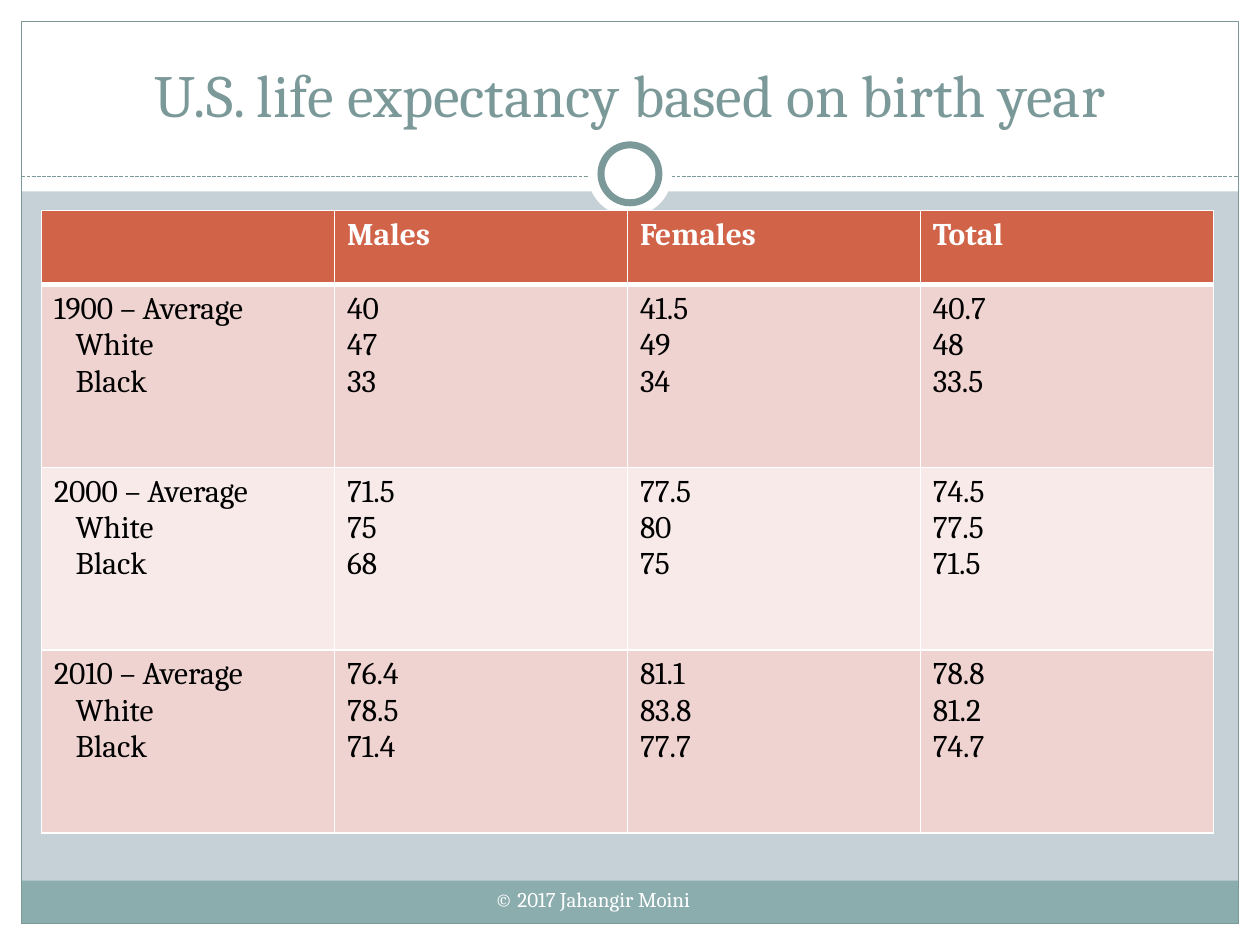
import pptx
import pptx.util
import pptx.dml.color
import pptx.enum.dml
import pptx.enum.shapes
import pptx.enum.text
import pptx.oxml
import pptx.oxml.ns
from lxml import etree

TITLE = "U.S. life expectancy based on birth year"
FOOTER = "© 2017 Jahangir Moini"
HEADERS = ["", "Males", "Females", "Total"]
GROUPS = ["Average", "White", "Black"]
EXPECTANCY = {
    "1900": [("40", "47", "33"), ("41.5", "49", "34"), ("40.7", "48", "33.5")],
    "2000": [("71.5", "75", "68"), ("77.5", "80", "75"), ("74.5", "77.5", "71.5")],
    "2010": [("76.4", "78.5", "71.4"), ("81.1", "83.8", "77.7"), ("78.8", "81.2", "74.7")],
}


class Theme:
    font = "Cambria"
    white, black = "FFFFFF", "000000"
    page, footer, accent = "C5D1D7", "8CADAE", "7C999A"
    header, bands = "D16349", ("EED3D0", "F7EAE9")
    title_size, table_size, footer_size = 34.2, 18, 12


W, H = 10, 7.5
EDGE = 0.17
BAND_TOP, BAND_H = 6.99, 0.34
HEAD_H, RULE_Y = 1.52, 1.4
RING_Y = 1.38
TABLE_X, TABLE_Y, TABLE_W = 0.33, 1.67, 9.3
HEADER_ROW, BODY_ROW = 0.59, 1.45
SUB_INDENT = 0.17

inch = pptx.util.Inches
rgb = pptx.dml.color.RGBColor.from_string
SHAPE = pptx.enum.shapes.MSO_SHAPE
ANCHOR = pptx.enum.text.MSO_ANCHOR
ALIGN = pptx.enum.text.PP_ALIGN


def write(tf, lines, size, color, bold=False, align=None, anchor=ANCHOR.TOP, sub_indent=0):
    tf.word_wrap = True
    tf.vertical_anchor = anchor
    for i, line in enumerate(lines):
        p = tf.paragraphs[0] if i == 0 else tf.add_paragraph()
        p.alignment = align
        if i and sub_indent:
            p._p.get_or_add_pPr().set("marL", str(inch(sub_indent)))
        r = p.add_run()
        r.text = line
        r.font.name = Theme.font
        r.font.size = pptx.util.Pt(size)
        r.font.bold = bold
        r.font.color.rgb = rgb(color)


def add_shape(s, kind, x, y, w, h, fill=None, line=None, width=0.75):
    sp = s.shapes.add_shape(kind, inch(x), inch(y), inch(w), inch(h))
    sp.shadow.inherit = False
    if fill:
        sp.fill.solid()
        sp.fill.fore_color.rgb = rgb(fill)
    else:
        sp.fill.background()
    if line:
        sp.line.color.rgb = rgb(line)
        sp.line.width = pptx.util.Pt(width)
    else:
        sp.line.fill.background()


def add_ring(s, size, **style):
    add_shape(s, SHAPE.OVAL, (W - size) / 2, RING_Y - size / 2, size, size, **style)


def add_frame(s):
    for box in [(0, H - EDGE, W, EDGE), (0, 0, W, HEAD_H), (0, 0, EDGE, H), (W - EDGE, 0, EDGE, H)]:
        add_shape(s, SHAPE.RECTANGLE, *box, fill=Theme.white)
    inner = W - 2 * EDGE
    add_shape(s, SHAPE.RECTANGLE, EDGE, BAND_TOP, inner, BAND_H, fill=Theme.footer)
    add_shape(s, SHAPE.RECTANGLE, EDGE, EDGE, inner, H - 2 * EDGE, line=Theme.accent)
    rule = s.shapes.add_connector(pptx.enum.shapes.MSO_CONNECTOR.STRAIGHT,
                                  inch(EDGE), inch(RULE_Y), inch(W - EDGE), inch(RULE_Y))
    rule.line.color.rgb = rgb(Theme.accent)
    rule.line.width = pptx.util.Pt(0.75)
    rule.line.dash_style = pptx.enum.dml.MSO_LINE.SQUARE_DOT
    etree.SubElement(rule._element.spPr, pptx.oxml.ns.qn("a:effectLst"))
    add_ring(s, 0.67, fill=Theme.white)
    add_ring(s, 0.46, fill=Theme.white, line=Theme.accent, width=4)


def set_borders(cell, bottom):
    pr = cell._tc.get_or_add_tcPr()
    for i, (side, width) in enumerate([("L", 1), ("R", 1), ("T", 1), ("B", bottom)]):
        pr.insert(i, pptx.oxml.parse_xml(
            f'<a:ln{side} {pptx.oxml.ns.nsdecls("a")} w="{pptx.util.Pt(width)}"><a:solidFill>'
            f'<a:srgbClr val="{Theme.white}"/></a:solidFill></a:ln{side}>'))


def add_expectancy_table(s):
    rows = [[[text] if text else [] for text in HEADERS]]
    for year, columns in EXPECTANCY.items():
        rows.append([[f"{year} – {GROUPS[0]}", *GROUPS[1:]], *columns])
    height = HEADER_ROW + BODY_ROW * len(EXPECTANCY)
    table = s.shapes.add_table(len(rows), len(HEADERS), inch(TABLE_X), inch(TABLE_Y),
                               inch(TABLE_W), inch(height)).table
    for column in table.columns:
        column.width = inch(TABLE_W / len(HEADERS))
    for i, row in enumerate(rows):
        header = i == 0
        table.rows[i].height = inch(HEADER_ROW if header else BODY_ROW)
        for j, lines in enumerate(row):
            cell = table.cell(i, j)
            cell.fill.solid()
            cell.fill.fore_color.rgb = rgb(Theme.header if header else Theme.bands[(i - 1) % 2])
            set_borders(cell, 3 if header else 1)
            write(cell.text_frame, lines, Theme.table_size,
                  Theme.white if header else Theme.black, bold=header,
                  sub_indent=SUB_INDENT if j == 0 else 0)
            if i > 1:
                continue
            top = cell._tc.tcPr.find(pptx.oxml.ns.qn("a:lnT"))
            top.set("w", str(pptx.util.Pt(1 if header else 3)))


def main():
    prs = pptx.Presentation()
    prs.slide_width, prs.slide_height = inch(W), inch(H)
    s = prs.slides.add_slide(prs.slide_layouts[5])
    s.background.fill.solid()
    s.background.fill.fore_color.rgb = rgb(Theme.page)
    add_frame(s)

    footer = s.shapes.add_textbox(inch(3.83), inch(BAND_TOP), inch(2.35), inch(0.4))
    write(footer.text_frame, [FOOTER], Theme.footer_size, Theme.white)

    title = s.shapes.title
    title.left, title.top, title.width, title.height = map(inch, (0.33, 0.25, 9.33, 0.83))
    write(title.text_frame, [TITLE], Theme.title_size, Theme.accent,
          align=ALIGN.CENTER, anchor=ANCHOR.BOTTOM)
    s.shapes._spTree.append(title._element)

    add_expectancy_table(s)
    prs.save("out.pptx")


if __name__ == "__main__":
    main()
